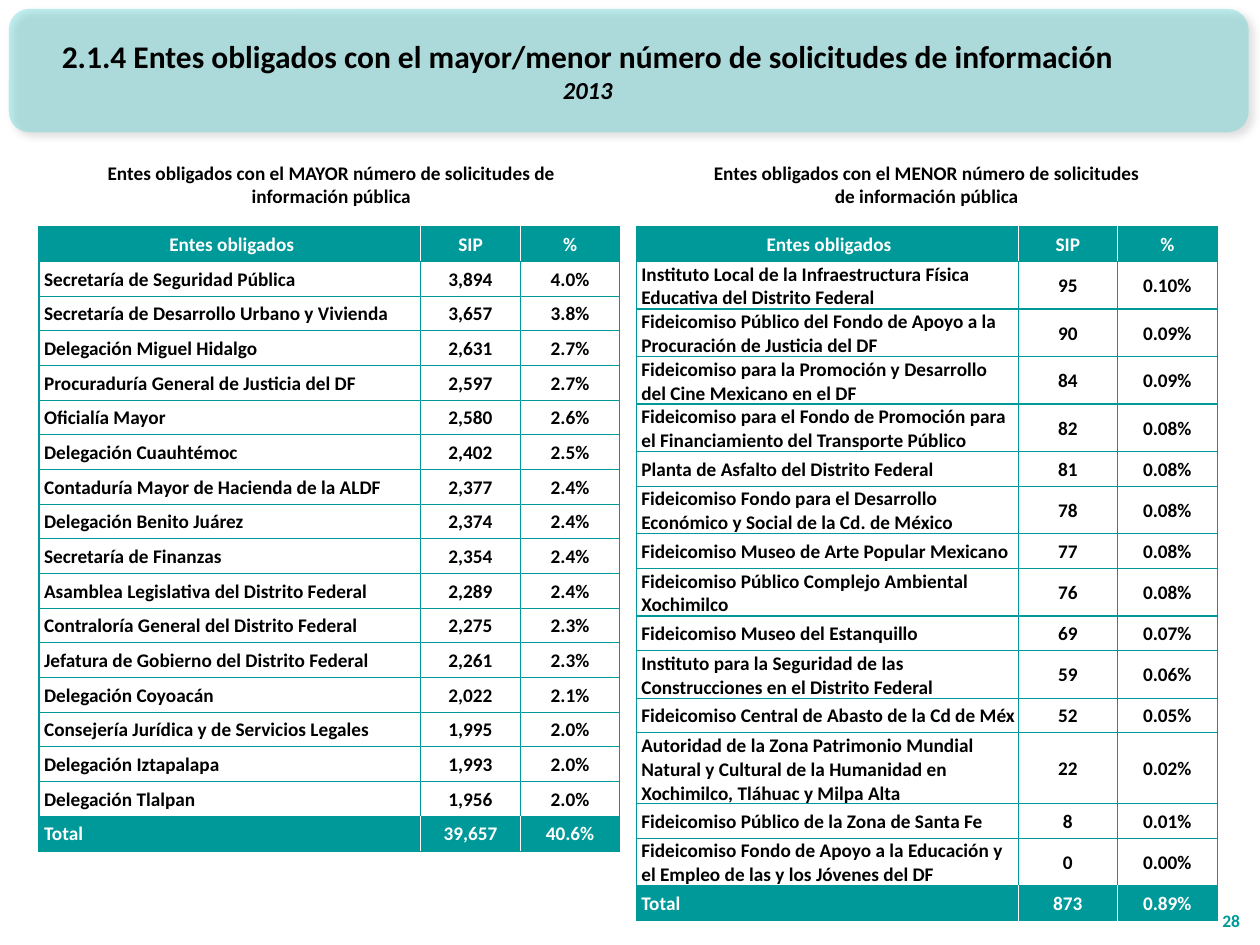
from dataclasses import dataclass

from lxml import etree
from pptx import Presentation
from pptx.dml.color import RGBColor
from pptx.enum.shapes import MSO_SHAPE
from pptx.enum.text import MSO_ANCHOR, MSO_AUTO_SIZE, PP_ALIGN
from pptx.oxml import parse_xml
from pptx.oxml.ns import nsdecls, qn
from pptx.util import Inches, Pt

CENTER, LEFT, RIGHT = PP_ALIGN.CENTER, PP_ALIGN.LEFT, PP_ALIGN.RIGHT
TOP, MIDDLE, BOTTOM = MSO_ANCHOR.TOP, MSO_ANCHOR.MIDDLE, MSO_ANCHOR.BOTTOM
NO_AUTOFIT = MSO_AUTO_SIZE.NONE
ROUNDED = MSO_SHAPE.ROUNDED_RECTANGLE
TITLE_ONLY = 5


@dataclass(frozen=True)
class Theme:
    font: str = "Calibri"
    teal: str = "009999"
    banner: str = "33CCCC"
    black: str = "000000"
    white: str = "FFFFFF"
    title_size: int = 18
    subtitle_size: int = 14
    body_size: int = 11
    number_size: int = 10
    border_width: float = 0.75


HEADER = ("Entes obligados", "SIP", "%")
COLUMN_WIDTHS = (3.03, 0.79, 0.79)
ROW_HEIGHT = 4.96 / 18
TABLE_TOP = 1.8

MOST_REQUESTED = [
    ("Secretaría de Seguridad Pública", "3,894", "4.0%"),
    ("Secretaría de Desarrollo Urbano y Vivienda", "3,657", "3.8%"),
    ("Delegación Miguel Hidalgo", "2,631", "2.7%"),
    ("Procuraduría General de Justicia del DF", "2,597", "2.7%"),
    ("Oficialía Mayor", "2,580", "2.6%"),
    ("Delegación Cuauhtémoc", "2,402", "2.5%"),
    ("Contaduría Mayor de Hacienda de la ALDF", "2,377", "2.4%"),
    ("Delegación Benito Juárez", "2,374", "2.4%"),
    ("Secretaría de Finanzas", "2,354", "2.4%"),
    ("Asamblea Legislativa del Distrito Federal", "2,289", "2.4%"),
    ("Contraloría General del Distrito Federal", "2,275", "2.3%"),
    ("Jefatura de Gobierno del Distrito Federal", "2,261", "2.3%"),
    ("Delegación Coyoacán", "2,022", "2.1%"),
    ("Consejería Jurídica y de Servicios Legales", "1,995", "2.0%"),
    ("Delegación Iztapalapa", "1,993", "2.0%"),
    ("Delegación Tlalpan", "1,956", "2.0%"),
    ("Total", "39,657", "40.6%"),
]

LEAST_REQUESTED = [
    ("Instituto Local de la Infraestructura Física Educativa del Distrito Federal", "95", "0.10%"),
    ("Fideicomiso Público del Fondo de Apoyo a la Procuración de Justicia del DF", "90", "0.09%"),
    ("Fideicomiso para la Promoción y Desarrollo del Cine Mexicano en el DF", "84", "0.09%"),
    ("Fideicomiso para el Fondo de Promoción para el Financiamiento del Transporte Público",
     "82", "0.08%"),
    ("Planta de Asfalto del Distrito Federal", "81", "0.08%"),
    ("Fideicomiso Fondo para el Desarrollo Económico y Social de la Cd. de México", "78", "0.08%"),
    ("Fideicomiso Museo de Arte Popular Mexicano", "77", "0.08%"),
    ("Fideicomiso Público Complejo Ambiental Xochimilco", "76", "0.08%"),
    ("Fideicomiso Museo del Estanquillo", "69", "0.07%"),
    ("Instituto para la Seguridad de las Construcciones en el Distrito Federal", "59", "0.06%"),
    ("Fideicomiso Central de Abasto de la Cd de Méx", "52", "0.05%"),
    ("Autoridad de la Zona Patrimonio Mundial Natural y Cultural de la Humanidad en "
     "Xochimilco, Tláhuac y Milpa Alta", "22", "0.02%"),
    ("Fideicomiso Público de la Zona de Santa Fe", "8", "0.01%"),
    ("Fideicomiso Fondo de Apoyo a la Educación y el Empleo de las y los Jóvenes del DF",
     "0", "0.00%"),
    ("Total", "873", "0.89%"),
]


class SlideBuilder:
    def __init__(self, slide, theme):
        self.slide = slide
        self.theme = theme

    def format_paragraph(self, paragraph, size, color, alignment, italic=False):
        paragraph.alignment = alignment
        for run in paragraph.runs:
            run.font.name = self.theme.font
            run.font.size = Pt(size)
            run.font.bold = True
            run.font.italic = italic
            run.font.color.rgb = RGBColor.from_string(color)

    def title(self, title, subtitle, left, top, width, height):
        shape = self.slide.shapes.title
        shape.left, shape.top = Inches(left), Inches(top)
        shape.width, shape.height = Inches(width), Inches(height)
        text_frame = shape.text_frame
        text_frame.text = f"{title}\n{subtitle}"
        text_frame.auto_size = NO_AUTOFIT
        text_frame.vertical_anchor = MIDDLE
        first, second = text_frame.paragraphs
        self.format_paragraph(first, self.theme.title_size, self.theme.black, CENTER)
        self.format_paragraph(second, self.theme.subtitle_size, self.theme.black, CENTER, True)

    def banner(self, left, top, width, height):
        shape = self.slide.shapes.add_shape(
            ROUNDED, Inches(left), Inches(top), Inches(width), Inches(height))
        shape.fill.solid()
        shape.fill.fore_color.rgb = RGBColor.from_string(self.theme.banner)
        shape.line.fill.background()
        properties = shape.element.spPr
        color = properties.find(f".//{qn('a:srgbClr')}")
        etree.SubElement(color, qn("a:alpha"), val="30000")
        properties.append(parse_xml(
            f'<a:effectLst {nsdecls("a")}><a:outerShdw blurRad="{Pt(4)}" dist="{Pt(3)}" '
            f'dir="2700000" algn="tl" rotWithShape="0"><a:srgbClr val="{self.theme.black}">'
            '<a:alpha val="40000"/></a:srgbClr></a:outerShdw></a:effectLst>'))
        self.slide.shapes.title.element.addprevious(shape.element)

    def text(self, text, left, top, width, height, size, color, alignment, anchor=TOP):
        shape = self.slide.shapes.add_textbox(
            Inches(left), Inches(top), Inches(width), Inches(height))
        text_frame = shape.text_frame
        text_frame.word_wrap = True
        text_frame.vertical_anchor = anchor
        text_frame.text = text
        self.format_paragraph(text_frame.paragraphs[0], size, color, alignment)

    def cell_borders(self, cell, left, right):
        properties = cell._tc.get_or_add_tcPr()
        teal = self.theme.teal
        sides = {"lnL": left, "lnR": right, "lnT": teal, "lnB": teal}
        for index, (side, color) in enumerate(sides.items()):
            properties.insert(index, parse_xml(
                f'<a:{side} {nsdecls("a")} w="{Pt(self.theme.border_width)}"><a:solidFill>'
                f'<a:srgbClr val="{color}"/></a:solidFill></a:{side}>'))

    def cell(self, cell, text, column, emphasized):
        theme = self.theme
        cell.text = text
        cell.vertical_anchor = MIDDLE
        cell.margin_left = Inches(0.01 if column else 0.04)
        cell.margin_right = cell.margin_top = Inches(0.01)
        cell.margin_bottom = 0
        if emphasized:
            cell.fill.solid()
            cell.fill.fore_color.rgb = RGBColor.from_string(theme.teal)
        else:
            cell.fill.background()
        inner = theme.white if emphasized else theme.teal
        last = len(COLUMN_WIDTHS) - 1
        self.cell_borders(cell, inner if column > 0 else theme.teal,
                          inner if column < last else theme.teal)
        alignment = CENTER if column or text == HEADER[0] else LEFT
        color = theme.white if emphasized else theme.black
        self.format_paragraph(cell.text_frame.paragraphs[0], theme.body_size, color, alignment)

    def table(self, body, left):
        rows = [HEADER, *body]
        table = self.slide.shapes.add_table(
            len(rows), len(HEADER), Inches(left), Inches(TABLE_TOP),
            Inches(sum(COLUMN_WIDTHS)), Inches(ROW_HEIGHT * len(rows))).table
        table.first_row = table.horz_banding = False
        for column, width in zip(table.columns, COLUMN_WIDTHS):
            column.width = Inches(width)
        for row_index, values in enumerate(rows):
            table.rows[row_index].height = Inches(ROW_HEIGHT)
            emphasized = row_index in (0, len(rows) - 1)
            for column, value in enumerate(values):
                self.cell(table.cell(row_index, column), value, column, emphasized)


def main():
    presentation = Presentation()
    presentation.slide_width, presentation.slide_height = Inches(10), Inches(7.5)
    slide = presentation.slides.add_slide(presentation.slide_layouts[TITLE_ONLY])
    theme = Theme()
    builder = SlideBuilder(slide, theme)
    builder.banner(0.07, 0.07, 9.84, 0.98)
    builder.title("2.1.4 Entes obligados con el mayor/menor número de solicitudes de información",
                  "2013", 0.08, 0.09, 9.17, 0.94)
    for kind, left, width in (("MAYOR", 0.64, 3.98), ("MENOR", 5.49, 3.73)):
        builder.text(f"Entes obligados con el {kind} número de solicitudes de información pública",
                     left, 1.23, width, 0.47, theme.body_size, theme.black, CENTER)
    builder.text("28", 9.54, 7.04, 0.4, 0.4, theme.number_size, theme.teal, RIGHT, BOTTOM)
    builder.table(MOST_REQUESTED, 0.31)
    builder.table(LEAST_REQUESTED, 5.05)
    presentation.save("out.pptx")


if __name__ == "__main__":
    main()
